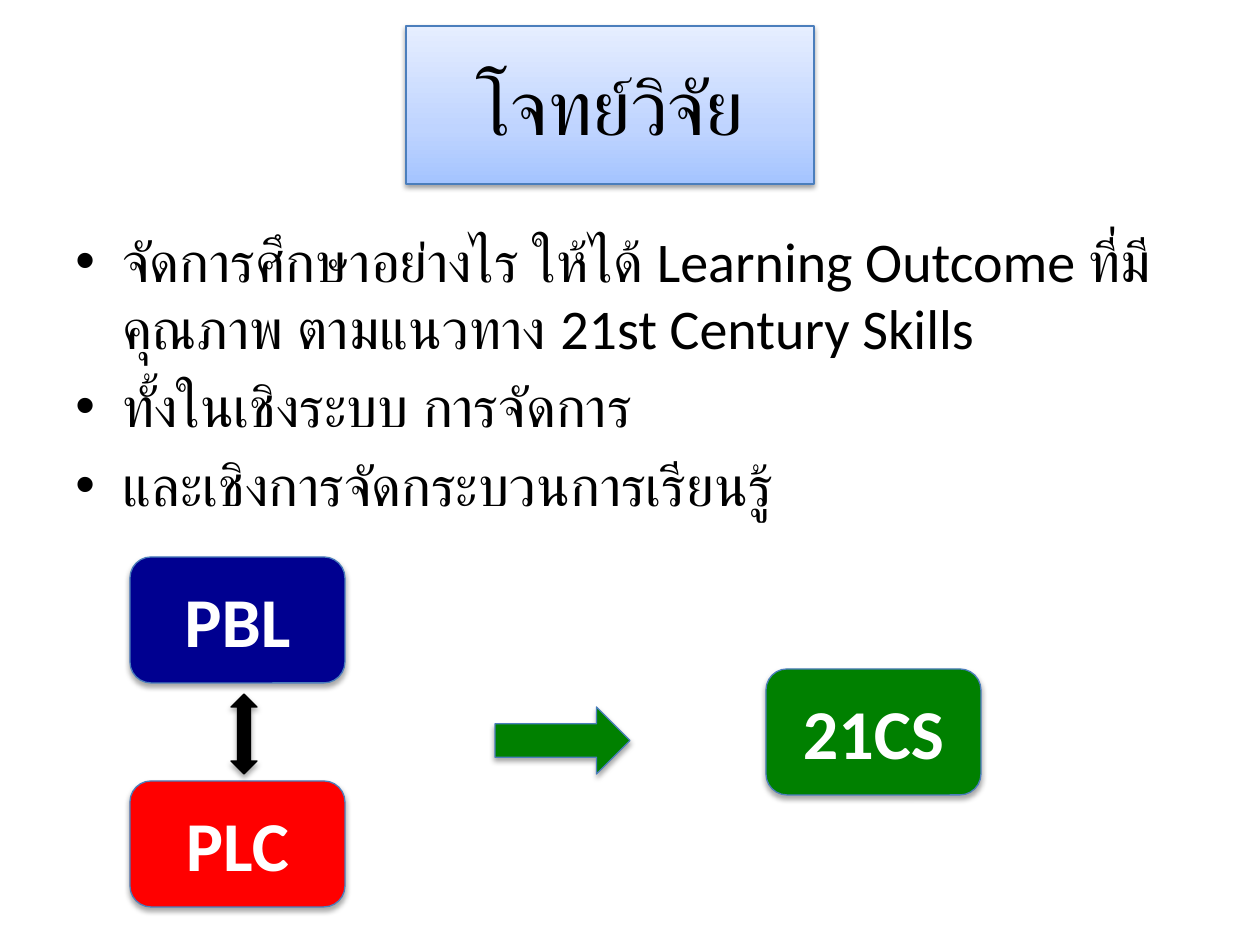
from dataclasses import dataclass
import copy

import pptx
import pptx.dml.color
import pptx.enum.shapes
import pptx.enum.text
import pptx.oxml
import pptx.oxml.ns
import pptx.util

PX = 914400 / 126
KIND = pptx.enum.shapes.MSO_SHAPE
ALIGN = pptx.enum.text.PP_ALIGN
ANCHOR = pptx.enum.text.MSO_ANCHOR


@dataclass(frozen=True)
class Theme:
    font: str = "Calibri"
    title: int = 44
    body: int = 32
    label: int = 40
    black: str = "000000"
    white: str = "FFFFFF"
    edge: str = "4B7EBC"
    navy: str = "000090"
    red: str = "FF0000"
    green: str = "008000"
    fade: tuple = ((0, "A4C4FF"), (0.35, "BFD4FF"), (1, "E6EEFF"))


@dataclass(frozen=True)
class Block:
    kind: KIND
    x: int
    y: int
    w: int
    h: int
    fill: str
    line: str
    text: str = ""


THEME = Theme()


def px(n: float) -> int:
    return round(n * PX)


def color(code: str) -> pptx.dml.color.RGBColor:
    return pptx.dml.color.RGBColor.from_string(code)


def write(para, text: str, size: int, ink: str, bold: bool = False) -> None:
    run = para.add_run()
    run.text = text
    run.font.name = THEME.font
    run.font.size = pptx.util.Pt(size)
    run.font.bold = bold
    run.font.color.rgb = color(ink)


def center(shape, text: str, size: int, ink: str, bold: bool = False) -> None:
    frame = shape.text_frame
    frame.word_wrap = True
    frame.vertical_anchor = ANCHOR.MIDDLE
    para = frame.paragraphs[0]
    para.alignment = ALIGN.CENTER
    write(para, text, size, ink, bold)


def shade(shape, alpha: int = 35, dist: float = 1.8) -> None:
    shape.shadow.inherit = False
    effect = shape._element.spPr.find(pptx.oxml.ns.qn("a:effectLst"))
    effect.append(pptx.oxml.parse_xml(
        f'<a:outerShdw {pptx.oxml.ns.nsdecls("a")} blurRad="{pptx.util.Pt(3.1)}" '
        f'dist="{pptx.util.Pt(dist)}" dir="5400000" rotWithShape="0">'
        f'<a:srgbClr val="{THEME.black}"><a:alpha val="{alpha * 1000}"/></a:srgbClr>'
        '</a:outerShdw>'))


def draw(slide, block: Block):
    shape = slide.shapes.add_shape(
        block.kind, px(block.x), px(block.y), px(block.w), px(block.h))
    shape.fill.solid()
    shape.fill.fore_color.rgb = color(block.fill)
    shape.line.color.rgb = color(block.line)
    shape.line.width = pptx.util.Pt(0.75)
    if block.text:
        center(shape, block.text, THEME.label, THEME.white, bold=True)
    return shape


def blend(shape, fade: tuple) -> None:
    shape.fill.gradient()
    shape.fill.gradient_angle = 90
    stops = shape.fill._fill._gradFill.find(pptx.oxml.ns.qn("a:gsLst"))
    stops.append(copy.deepcopy(stops[-1]))
    for stop, (place, code) in zip(shape.fill.gradient_stops, fade):
        stop.position = place
        stop.color.rgb = color(code)


def bullets(slide, items: tuple) -> None:
    box = slide.shapes.add_textbox(px(63), px(220), px(1134), px(624))
    frame = box.text_frame
    frame.word_wrap = True
    for i, item in enumerate(items):
        para = frame.add_paragraph() if i else frame.paragraphs[0]
        para.space_before = pptx.util.Pt(THEME.body * 0.2)
        props = para._p.get_or_add_pPr()
        props.set("marL", str(px(47)))
        props.set("indent", str(-px(47)))
        ns = pptx.oxml.ns.nsdecls("a")
        props.append(pptx.oxml.parse_xml(f'<a:buFont {ns} typeface="Arial"/>'))
        props.append(pptx.oxml.parse_xml(f'<a:buChar {ns} char="•"/>'))
        write(para, item, THEME.body, THEME.black)


def node(x: int, y: int, fill: str, text: str) -> Block:
    return Block(KIND.ROUNDED_RECTANGLE, x, y, 215, 126, fill, THEME.edge, text)


TITLE = Block(KIND.RECTANGLE, 406, 26, 408, 158, THEME.white, THEME.edge)
POINTS = (
    "จัดการศึกษาอย่างไร ให้ได้ Learning Outcome ที่มีคุณภาพ ตามแนวทาง 21st Century Skills",
    "ทั้งในเชิงระบบ การจัดการ",
    "และเชิงการจัดกระบวนการเรียนรู้",
)
FLOW = (
    node(130, 557, THEME.navy, "PBL"),
    node(130, 781, THEME.red, "PLC"),
    node(766, 669, THEME.green, "21CS"),
    Block(KIND.UP_DOWN_ARROW, 231, 694, 26, 80, THEME.black, THEME.black),
    Block(KIND.RIGHT_ARROW, 495, 707, 135, 67, THEME.green, THEME.edge),
)


def main() -> None:
    deck = pptx.Presentation()
    deck.slide_width, deck.slide_height = px(1260), px(945)
    slide = deck.slides.add_slide(deck.slide_layouts[6])

    # Title panel
    panel = draw(slide, TITLE)
    blend(panel, THEME.fade)
    shade(panel, alpha=38, dist=1.6)
    center(panel, "โจทย์วิจัย", THEME.title, THEME.black)

    # Research questions
    bullets(slide, POINTS)

    # Flow from methods to skills
    for block in FLOW:
        shade(draw(slide, block))

    deck.save("out.pptx")


if __name__ == "__main__":
    main()
